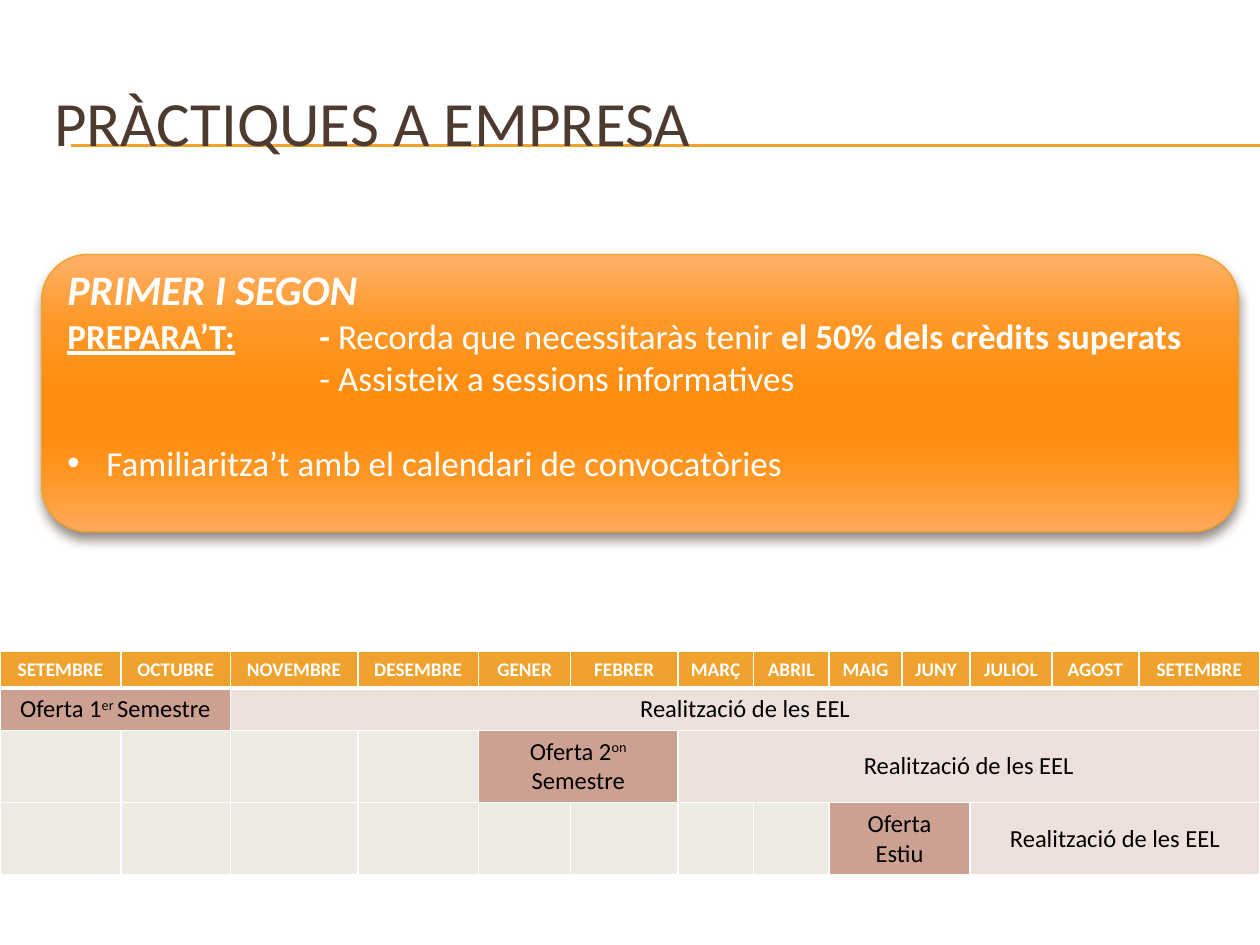
"""Build the slide on company internships: advice box and yearly calendar."""
from dataclasses import dataclass
from lxml import etree
from pptx import Presentation
from pptx import util as u
from pptx.dml.color import RGBColor
from pptx.enum import shapes, text
from pptx.oxml.ns import qn


@dataclass(frozen=True)
class Theme:
    font: str = "Calibri"
    brown: str = "4E3B30"
    amber: str = "F0A22E"
    white: str = "FFFFFF"
    black: str = "000000"
    offer: str = "CCA192"
    stay: str = "EEE0DB"
    empty: str = "ECEAE3"
    title: int = 36
    heading: int = 24
    body: int = 20
    month: int = 11
    cell: int = 14


T = Theme()
W, H = 10, 7.5
LEFT, WIDTH = 0.33, 9.5
TITLE = "PRÀCTIQUES A EMPRESA"
RULES = (1.15, 1.16)
GRADIENT = [(0, "FFB16A"), (25, "FF9826"), (50, "FF8D0F"),
            (65, "FF8D0F"), (80, "FF9724"), (100, "FFAA5C")]
B = {"bold": True}
ADVICE = [
    [("PRIMER I SEGON", {"bold": True, "italic": True, "size": u.Pt(T.heading)})],
    [("PREPARA’T:", {"bold": True, "underline": True}), ("\t- ", B),
     ("Recorda que necessitaràs tenir ", {}), ("el 50% dels crèdits superats", B)],
    [("\t- Assisteix a sessions informatives", {})],
    [("Familiaritza’t amb el calendari de convocatòries", {})],
]
MONTHS = [("SETEMBRE", 0.96), ("OCTUBRE", 0.87), ("NOVEMBRE", 1.01), ("DESEMBRE", 0.96),
          ("GENER", 0.73), ("FEBRER", 0.85), ("MARÇ", 0.6), ("ABRIL", 0.6), ("MAIG", 0.58),
          ("JUNY", 0.54), ("JULIOL", 0.65), ("AGOST", 0.69), ("SETEMBRE", 0.96)]
ROWS = (0.29, 0.33, 0.57, 0.57)
OFFERS = [(0, ["Oferta 1", "er ", "Semestre"]), (4, ["Oferta 2", "on ", "Semestre"]),
          (8, ["Oferta Estiu"])]
OFFER_MONTHS = 2
STAY = "Realització de les EEL"


def rgb(value):
    return RGBColor.from_string(value)


def sub(parent, tag, **attrs):
    return etree.SubElement(parent, qn(tag), {k: str(v) for k, v in attrs.items()})


def add_run(p, words, color, points, **fmt):
    r = p.add_run()
    r.text = words
    for key, value in {"name": T.font, "size": u.Pt(points), "bold": False, **fmt}.items():
        setattr(r.font, key, value)
    r.font.color.rgb = rgb(color)
    return r


def add_title(s):
    for y in RULES:
        c = s.shapes.add_connector(shapes.MSO_CONNECTOR.STRAIGHT,
                                   u.Inches(0.56), u.Inches(y), u.Inches(W), u.Inches(y))
        c.line.color.rgb, c.line.width = rgb(T.amber), u.Pt(0.75)
        sub(c._element.spPr, "a:effectLst")
    sp = s.shapes.title
    s.shapes._spTree.append(sp._element)
    sp.left, sp.top, sp.width, sp.height = map(u.Inches, (LEFT, 0.5, WIDTH, 0.92))
    sp.text_frame.vertical_anchor = text.MSO_ANCHOR.MIDDLE
    p = sp.text_frame.paragraphs[0]
    p.alignment = text.PP_ALIGN.LEFT
    add_run(p, TITLE, T.brown, T.title)


def style_box(sp):
    sp.fill.gradient()
    sp.fill.gradient_angle = 270
    sp.line.color.rgb, sp.line.width = rgb(T.amber), u.Pt(0.79)
    sp.shadow.inherit = False
    spPr = sp._element.spPr
    stops = spPr.find(".//" + qn("a:gsLst"))
    for old in list(stops):
        stops.remove(old)
    for pos, color in GRADIENT:
        sub(sub(stops, "a:gs", pos=pos * 1000), "a:srgbClr", val=color)
    shadow = sub(spPr.find(qn("a:effectLst")), "a:outerShdw", blurRad=u.Pt(6),
                 dist=u.Pt(4), dir=5400000, algn="ctr", rotWithShape=0)
    sub(sub(shadow, "a:srgbClr", val=T.brown), "a:alpha", val=60000)


def add_advice(s):
    sp = s.shapes.add_shape(shapes.MSO_SHAPE.ROUNDED_RECTANGLE,
                            *map(u.Inches, (LEFT, 2.02, WIDTH, 2.2)))
    style_box(sp)
    tf = sp.text_frame
    tf.word_wrap, tf.vertical_anchor = True, text.MSO_ANCHOR.MIDDLE
    tf.margin_top, tf.margin_bottom = 0, u.Inches(0.31)
    for i, runs in enumerate(ADVICE):
        p = tf.add_paragraph() if i else tf.paragraphs[0]
        p.alignment = text.PP_ALIGN.LEFT
        pPr = p._p.get_or_add_pPr()
        if runs is ADVICE[-1]:
            p.space_before = u.Pt(24.4)
            pPr.set("marL", str(u.Inches(0.31)))
            pPr.set("indent", str(-u.Inches(0.31)))
            sub(pPr, "a:buFont", typeface="Arial")
            sub(pPr, "a:buChar", char="•")
        else:
            sub(sub(pPr, "a:tabLst"), "a:tab", pos=u.Inches(2), algn="l")
        for words, fmt in runs:
            add_run(p, words, T.white, T.body, **fmt)


def style_cell(cell, fill, top=1, bottom=1):
    cell.vertical_anchor = text.MSO_ANCHOR.MIDDLE
    tcPr = cell._tc.get_or_add_tcPr()
    for side, width in (("L", 1), ("R", 1), ("T", top), ("B", bottom)):
        ln = sub(tcPr, f"a:ln{side}", w=u.Pt(width))
        sub(sub(ln, "a:solidFill"), "a:srgbClr", val=T.white)
    cell.fill.solid()
    cell.fill.fore_color.rgb = rgb(fill)


def fill_cell(cell, parts, color, points, bold=False):
    p = cell.text_frame.paragraphs[0]
    p.alignment = text.PP_ALIGN.CENTER
    for i, words in enumerate(parts):
        r = add_run(p, words, color, points, bold=bold)
        if i == 1:
            r.font._element.set("baseline", "30000")


def add_calendar(s):
    n = len(MONTHS)
    table = s.shapes.add_table(len(ROWS), n, 0, u.Inches(5.17),
                               u.Inches(W), u.Inches(sum(ROWS))).table
    for row, height in zip(table.rows, ROWS):
        row.height = u.Inches(height)
    for j, (month, width) in enumerate(MONTHS):
        table.columns[j].width = u.Inches(width)
        style_cell(table.cell(0, j), T.amber, bottom=3)
        fill_cell(table.cell(0, j), [month], T.white, T.month, True)
    for i, (start, offer) in enumerate(OFFERS, 1):
        stay = start + OFFER_MONTHS
        for j in range(n):
            color = T.empty if j < start else T.offer if j < stay else T.stay
            style_cell(table.cell(i, j), color, top=3 if i == 1 else 1)
        for first, last, parts in ((start, stay - 1, offer), (stay, n - 1, [STAY])):
            table.cell(i, first).merge(table.cell(i, last))
            fill_cell(table.cell(i, first), parts, T.black, T.cell)


def main():
    prs = Presentation()
    prs.slide_width, prs.slide_height = u.Inches(W), u.Inches(H)
    s = prs.slides.add_slide(prs.slide_layouts[5])
    add_title(s)
    add_advice(s)
    add_calendar(s)
    prs.save("out.pptx")


if __name__ == "__main__":
    main()
